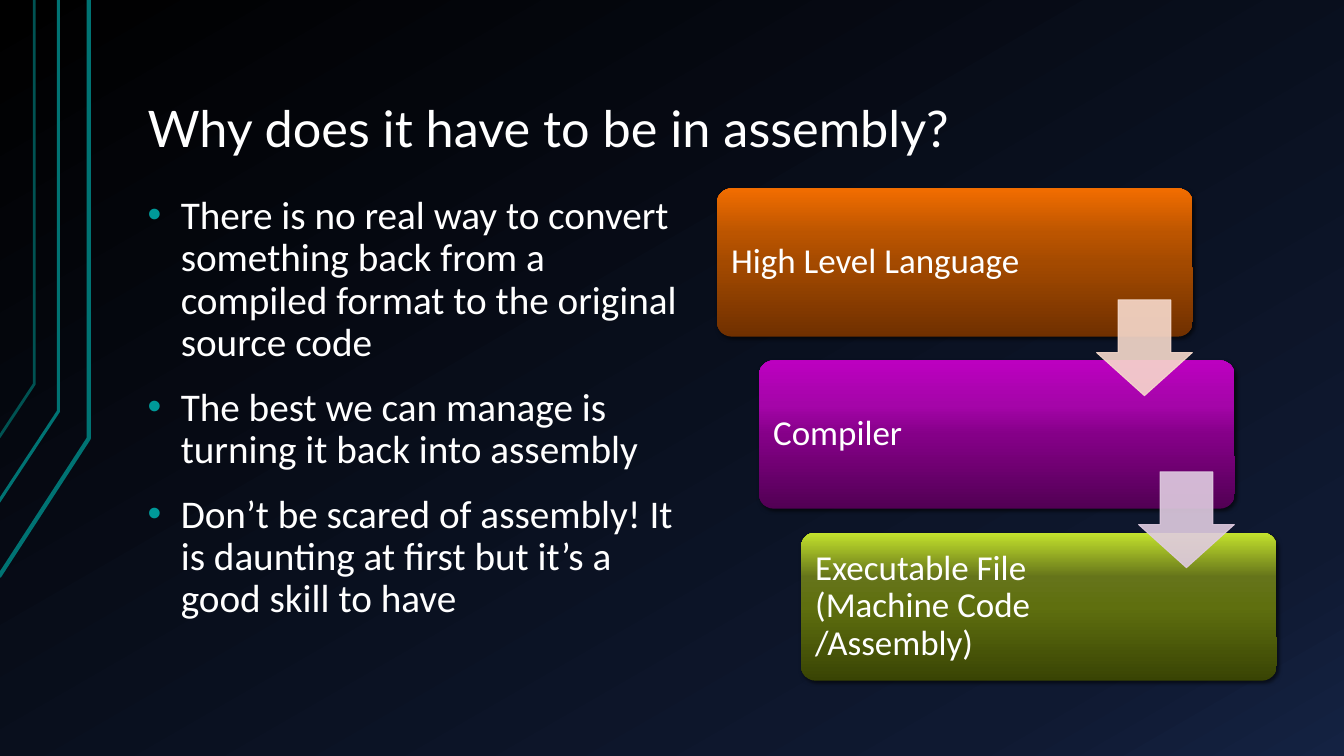
from dataclasses import dataclass

from pptx import Presentation
from pptx.dml.color import RGBColor
from pptx.dml.fill import FillFormat
from pptx.enum.shapes import MSO_SHAPE as Preset
from pptx.enum.text import MSO_ANCHOR as Anchor, MSO_AUTO_SIZE as AutoSize, PP_ALIGN as Align
from pptx.oxml import parse_xml
from pptx.oxml.ns import nsdecls, qn
from pptx.shapes.autoshape import Shape
from pptx.slide import Slide
from pptx.text.text import TextFrame, _Paragraph as Paragraph
from pptx.util import Emu, Inches, Pt

COLUMNS, ROWS = 160, 90
SLIDE_WIDTH, SLIDE_HEIGHT = Inches(13.33), Inches(7.5)

WHITE = RGBColor(0xFF, 0xFF, 0xFF)
BULLET_TEAL = RGBColor(0x00, 0x99, 0x99)
RAIL_TEAL = RGBColor(0x00, 0x73, 0x73)
RAIL_DIM = RGBColor(0x00, 0x52, 0x52)
PEACH = RGBColor(0xF7, 0xDA, 0xCC)
LILAC = RGBColor(0xE0, 0xCC, 0xE1)

Stops = list[tuple[int, RGBColor]]
NIGHT: Stops = [(0, RGBColor(0x00, 0x00, 0x00)), (85, RGBColor(0x0F, 0x19, 0x31)),
                (100, RGBColor(0x14, 0x22, 0x42))]
ORANGE: Stops = [(0, RGBColor(0x70, 0x30, 0x00)), (50, RGBColor(0xA4, 0x4A, 0x00)),
                 (70, RGBColor(0xBC, 0x55, 0x00)), (100, RGBColor(0xF2, 0x6D, 0x00))]
PURPLE: Stops = [(0, RGBColor(0x52, 0x00, 0x54)), (50, RGBColor(0x85, 0x00, 0x88)),
                 (70, RGBColor(0xA5, 0x05, 0xA9)), (100, RGBColor(0xBC, 0x00, 0xC0))]
LIME: Stops = [(0, RGBColor(0x39, 0x44, 0x04)), (50, RGBColor(0x5F, 0x6F, 0x0F)),
               (70, RGBColor(0x65, 0x74, 0x1A)), (100, RGBColor(0xC4, 0xE3, 0x2D))]


@dataclass(frozen=True)
class Area:
    column: float
    row: float
    columns: float
    rows: float

    def shifted(self, columns: float, rows: float) -> "Area":
        return Area(self.column + columns, self.row + rows, self.columns, self.rows)

    def lengths(self) -> tuple[Emu, Emu, Emu, Emu]:
        return across(self.column), down(self.row), across(self.columns), down(self.rows)


@dataclass(frozen=True)
class Rail:
    points: list[tuple[float, float]]
    color: RGBColor
    weight: float


@dataclass(frozen=True)
class Step:
    label: str
    stops: Stops
    label_columns: float


TITLE = "Why does it have to be in assembly?"
TITLE_AREA = Area(16, 3.6, 136, 16.1)
BODY_AREA = Area(16, 22.44, 66.6, 58.56)
STEP_AREA = Area(85.35, 22.44, 56.65, 17.64)
ARROW_AREA = Area(130.55, 35.7, 11.4, 11.4)
STEP_SHIFT = (5, 20.48)
LABEL_INSET = 0.52

POINTS = [
    "There is no real way to convert something back from a compiled format to the original source code",
    "The best we can manage is turning it back into assembly",
    "Don’t be scared of assembly! It is daunting at first but it’s a good skill to have",
]
RAILS = [
    Rail([(-0.12, 68.64), (10.56, 52.2), (10.56, 0)], RAIL_TEAL, 3),
    Rail([(-0.24, 59.88), (6.96, 48.96), (6.96, 0)], RAIL_TEAL, 2.25),
    Rail([(-0.12, 52.08), (4.08, 45.72), (4.08, 0)], RAIL_DIM, 2),
]
STEPS = [
    Step("High Level Language", ORANGE, 37.7),
    Step("Compiler", PURPLE, 39.25),
    Step("Executable File (Machine Code /Assembly)", LIME, 39.25),
]
ARROWS = [PEACH, LILAC]


def across(columns: float) -> Emu:
    return Emu(round(SLIDE_WIDTH * columns / COLUMNS))


def down(rows: float) -> Emu:
    return Emu(round(SLIDE_HEIGHT * rows / ROWS))


def paint_gradient(fill: FillFormat, element, stops: Stops, angle: int) -> None:
    fill.gradient()
    fill.gradient_angle = 360 - angle
    stop_list = next(element.iter(qn("a:gsLst")))
    for stop in list(stop_list):
        stop_list.remove(stop)
    for percent, color in stops:
        stop_list.append(parse_xml(
            f'<a:gs {nsdecls("a")} pos="{percent * 1000}"><a:srgbClr val="{color}"/></a:gs>'))


def set_frame(frame: TextFrame, anchor: Anchor, side: float, edge: float) -> None:
    frame.word_wrap = True
    frame.auto_size = AutoSize.NONE
    frame.vertical_anchor = anchor
    frame.margin_left = frame.margin_right = Inches(side)
    frame.margin_top = frame.margin_bottom = Inches(edge)


def write(para: Paragraph, text: str, font: str, size: float) -> None:
    para.alignment = Align.LEFT
    para.line_spacing = 0.9
    span = para.add_run()
    span.text = text
    span.font.name = font
    span.font.size = Pt(size)
    span.font.color.rgb = WHITE


def add_bullet(para: Paragraph) -> None:
    properties = para._p.get_or_add_pPr()
    properties.set("marL", str(Inches(0.33)))
    properties.set("indent", str(-Inches(0.33)))
    for tag in (f'<a:buClr {nsdecls("a")}><a:srgbClr val="{BULLET_TEAL}"/></a:buClr>',
                f'<a:buFont {nsdecls("a")} typeface="Arial"/>',
                f'<a:buChar {nsdecls("a")} char="•"/>'):
        properties.append(parse_xml(tag))


def draw_rail(page: Slide, rail: Rail) -> None:
    start, *rest = [(across(column), down(row)) for column, row in rail.points]
    builder = page.shapes.build_freeform(*start)
    builder.add_line_segments(rest, close=False)
    line = builder.convert_to_shape()
    line.shadow.inherit = False
    line.fill.background()
    line.line.color.rgb = rail.color
    line.line.width = Pt(rail.weight)


def draw_title(page: Slide) -> None:
    title = page.shapes.title
    title.left, title.top, title.width, title.height = TITLE_AREA.lengths()
    set_frame(title.text_frame, Anchor.BOTTOM, 0.13, 0.07)
    write(title.text_frame.paragraphs[0], TITLE, "Lato", 36)


def draw_points(page: Slide) -> None:
    frame = page.shapes.add_textbox(*BODY_AREA.lengths()).text_frame
    set_frame(frame, Anchor.TOP, 0.13, 0.07)
    for index, point in enumerate(POINTS):
        para = frame.add_paragraph() if index else frame.paragraphs[0]
        write(para, point, "Calibri", 28)
        para.space_before = Pt(16)
        add_bullet(para)


def cast_shadow(box: Shape) -> None:
    box.shadow.inherit = False
    box._element.spPr.find(qn("a:effectLst")).append(parse_xml(
        f'<a:outerShdw {nsdecls("a")} blurRad="{Pt(3)}" dist="{Pt(2)}" dir="2700000" '
        'algn="ctr" rotWithShape="0"><a:srgbClr val="000000"><a:alpha val="60000"/>'
        '</a:srgbClr></a:outerShdw>'))


def draw_step(page: Slide, step: Step, area: Area) -> None:
    box = page.shapes.add_shape(Preset.ROUNDED_RECTANGLE, *area.lengths())
    box.adjustments[0] = 0.1
    paint_gradient(box.fill, box._element, step.stops, 270)
    box.line.fill.background()
    cast_shadow(box)
    label_area = Area(area.column + LABEL_INSET, area.row + LABEL_INSET,
                      step.label_columns, area.rows - 2 * LABEL_INSET)
    frame = page.shapes.add_textbox(*label_area.lengths()).text_frame
    set_frame(frame, Anchor.MIDDLE, 0.1, 0.1)
    write(frame.paragraphs[0], step.label, "Calibri", 25)


def draw_arrow(page: Slide, color: RGBColor, area: Area) -> None:
    arrow = page.shapes.add_shape(Preset.DOWN_ARROW, *area.lengths())
    arrow.adjustments[0], arrow.adjustments[1] = 0.55, 0.45
    arrow.shadow.inherit = False
    arrow.fill.solid()
    arrow.fill.fore_color.rgb = color
    arrow.line.color.rgb = color
    arrow.line.width = Pt(0.75)
    for shade in arrow._element.spPr.iter(qn("a:srgbClr")):
        shade.append(parse_xml(f'<a:alpha {nsdecls("a")} val="90000"/>'))


def main() -> None:
    deck = Presentation()
    deck.slide_width, deck.slide_height = SLIDE_WIDTH, SLIDE_HEIGHT
    page = deck.slides.add_slide(deck.slide_layouts.get_by_name("Title Only"))
    paint_gradient(page.background.fill, page._element, NIGHT, 60)
    for rail in RAILS:
        draw_rail(page, rail)
    draw_title(page)
    draw_points(page)
    columns, rows = STEP_SHIFT
    for index, step in enumerate(STEPS):
        draw_step(page, step, STEP_AREA.shifted(index * columns, index * rows))
    for index, color in enumerate(ARROWS):
        draw_arrow(page, color, ARROW_AREA.shifted(index * columns, index * rows))
    deck.save("out.pptx")


if __name__ == "__main__":
    main()
